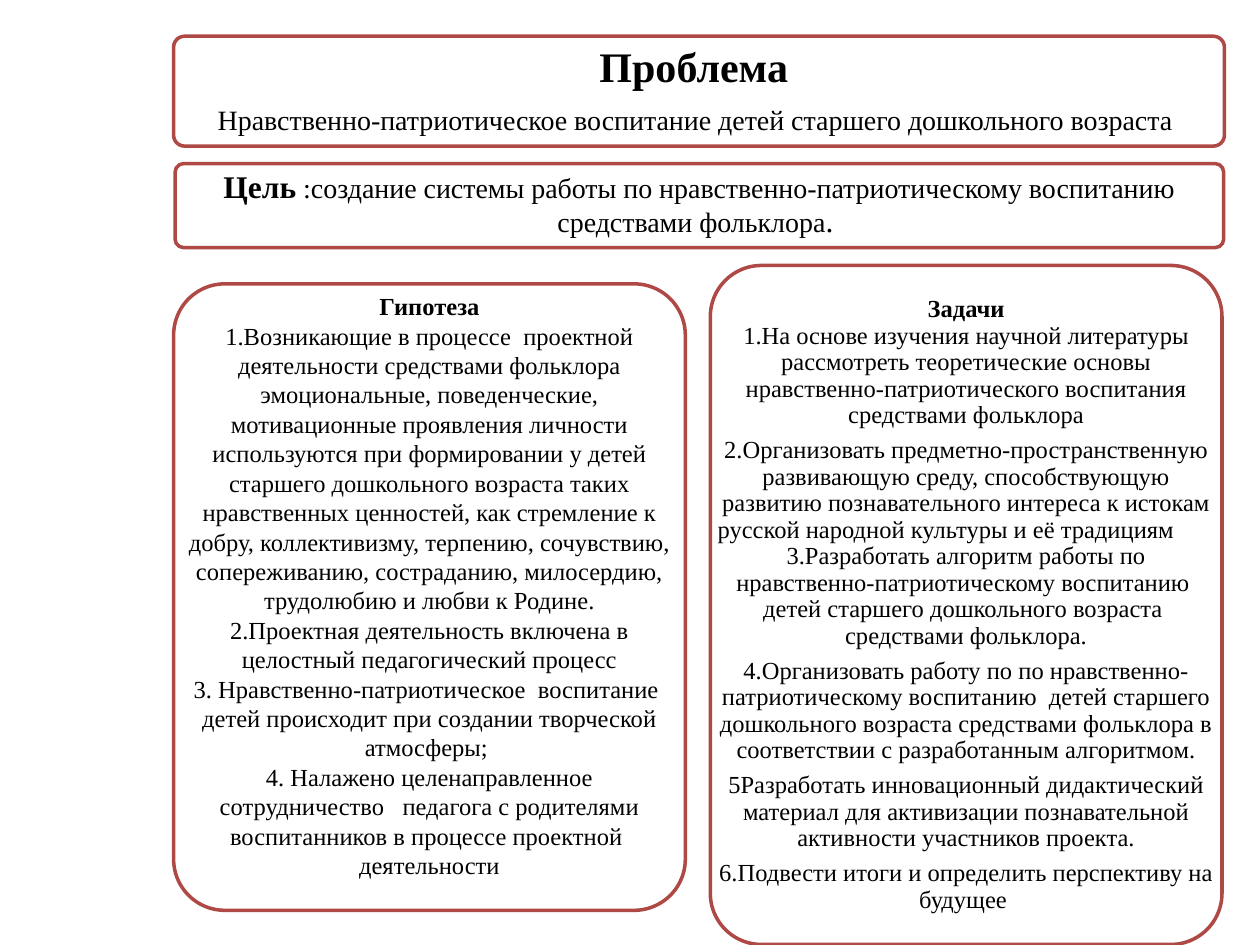
from lxml.etree import SubElement
from pptx import Presentation
from pptx.dml.color import RGBColor
from pptx.enum.shapes import MSO_SHAPE
from pptx.enum.text import MSO_ANCHOR, PP_ALIGN
from pptx.oxml.ns import qn
from pptx.util import Pt

FONT = "Times New Roman"
BORDER, WHITE, BLACK = "AE4946", "FFFFFF", "000000"
TIGHT = 0.9         # line spacing of the compact boxes
AFTER = 0.35        # space after a compact paragraph, as a share of its text size

# A paragraph is a list of runs: (text, size, bold)
PROBLEM = [
    [("Проблема ", 24, True)],
    [("Нравственно-патриотическое воспитание детей старшего дошкольного возраста ", 16, False)],
]
GOAL = [
    [("Цель", 18, True),
     (" :создание системы работы по нравственно-патриотическому воспитанию средствами фольклора", 16, False),
     (". ", 18, False)],
]
HYPOTHESIS = [
    [("Гипотеза", 14, True)],
    [("1.Возникающие в процессе  проектной деятельности средствами фольклора эмоциональные, "
      "поведенческие, мотивационные проявления личности используются при формировании у детей "
      "старшего дошкольного возраста таких нравственных ценностей, как стремление к добру, "
      "коллективизму, терпению, сочувствию, сопереживанию, состраданию, милосердию, трудолюбию "
      "и любви к Родине.", 14, False)],
    [("2.Проектная деятельность включена в целостный педагогический процесс", 14, False)],
    [("3. Нравственно-патриотическое  воспитание  детей происходит при создании творческой "
      "атмосферы; ", 14, False)],
    [("4. Налажено целенаправленное сотрудничество   педагога с родителями воспитанников "
      "в процессе проектной  деятельности", 14, False)],
]
TASKS = [
    [("Задачи\n", 14, True),
     ("1.На основе изучения научной литературы рассмотреть теоретические основы "
      "нравственно-патриотического воспитания средствами фольклора", 14, False)],
    [("2.Организовать предметно-пространственную развивающую среду, способствующую развитию "
      "познавательного интереса к истокам русской народной культуры и её традициям\t"
      "3.Разработать алгоритм работы по нравственно-патриотическому воспитанию  детей старшего "
      "дошкольного возраста  средствами фольклора.", 14, False)],
    [("4.Организовать работу по по нравственно-патриотическому воспитанию  детей старшего "
      "дошкольного возраста средствами фольклора в соответствии с разработанным алгоритмом.", 14, False)],
    [("5Разработать инновационный дидактический материал для активизации познавательной "
      "активности участников проекта.", 14, False)],
    [("6.Подвести итоги и определить перспективу на будущее ", 14, False)],
]

# (left, top, width, height), inset, compact spacing, anchor, paragraphs
BOXES = [
    ((99.2, 20.7, 600.5, 62.8), 7.2, True, MSO_ANCHOR.MIDDLE, PROBLEM),
    ((100.1, 93.5, 599.2, 48), 5.3, True, MSO_ANCHOR.MIDDLE, GOAL),
    ((99.2, 162.2, 292.4, 358), 4.2, False, MSO_ANCHOR.TOP, HYPOTHESIS),
    ((405.9, 151.7, 292.4, 388), 4.2, True, MSO_ANCHOR.MIDDLE, TASKS),
]


def color(value):
    return RGBColor.from_string(value)


def add_frame(s, place):
    sp = s.shapes.add_shape(MSO_SHAPE.ROUNDED_RECTANGLE, *place)
    sp.adjustments[0] = 0.1
    sp.shadow.inherit = False
    sp.fill.solid()
    sp.fill.fore_color.rgb = color(WHITE)
    sp.line.color.rgb = color(BORDER)
    sp.line.width = Pt(2)


def add_run(p, text, size, bold):
    r = p.add_run()
    r.text = text.rstrip("\n")
    r.font.name, r.font.size, r.font.bold = FONT, Pt(size), bold
    r.font.color.rgb = color(BLACK)
    if text.endswith("\n"):
        p.add_line_break()
        # Keep the break at the size of its line
        SubElement(p._p.findall(qn("a:br"))[-1], qn("a:rPr"), sz=str(size * 100))


def add_text(s, place, inset, compact, anchor, paragraphs):
    tf = s.shapes.add_textbox(*place).text_frame
    tf.word_wrap = True
    tf.vertical_anchor = anchor
    tf.margin_left = tf.margin_top = tf.margin_right = tf.margin_bottom = Pt(inset)
    for i, runs in enumerate(paragraphs):
        p = tf.add_paragraph() if i else tf.paragraphs[0]
        p.alignment = PP_ALIGN.CENTER
        if compact:
            p.line_spacing = TIGHT
            p.space_after = Pt(AFTER * runs[0][1])
        for run in runs:
            add_run(p, *run)


prs = Presentation()
prs.slide_width, prs.slide_height = Pt(720), Pt(540)
s = prs.slides.add_slide(prs.slide_layouts[6])

for box, *text in BOXES:
    place = [Pt(v) for v in box]
    add_frame(s, place)
    add_text(s, place, *text)

prs.save("out.pptx")
